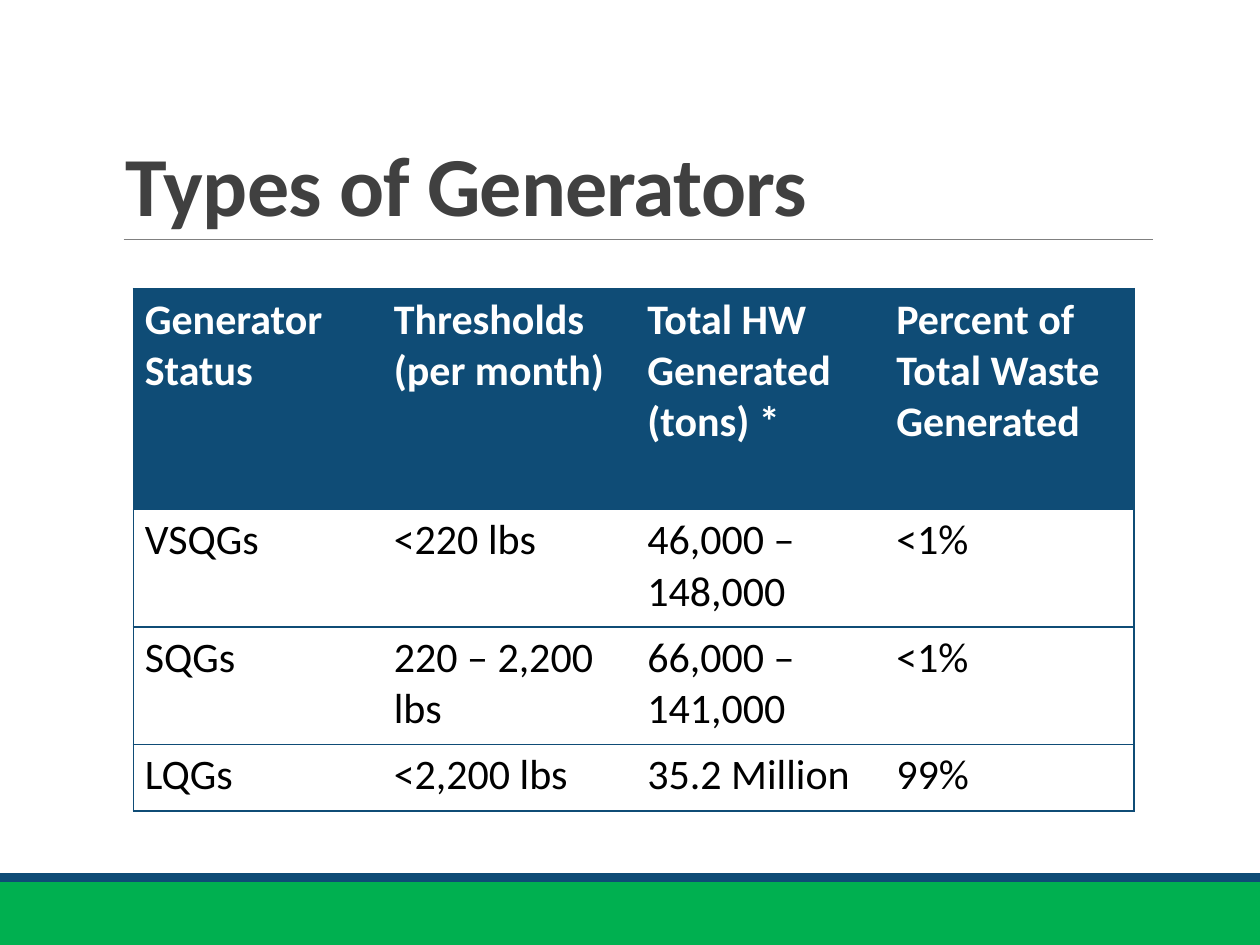
"""Build the slide on types of hazardous waste generators."""
import lxml.etree
import pptx
import pptx.dml.color
import pptx.enum.shapes
import pptx.enum.text
import pptx.oxml.ns
import pptx.util

Cm = pptx.util.Cm
Pt = pptx.util.Pt
RGBColor = pptx.dml.color.RGBColor
qn = pptx.oxml.ns.qn

TITLE = "Types of Generators"
ROWS = [
    ["Generator Status", "Thresholds\n(per month)", "Total HW Generated (tons) *",
     "Percent of Total Waste Generated"],
    ["VSQGs", "<220 lbs", "46,000 – 148,000", "<1%"],
    ["SQGs", "220 – 2,200 lbs", "66,000 – 141,000", "<1%"],
    ["LQGs", "<2,200 lbs", "35.2 Million", "99%"],
]
COLUMN_WIDTHS = [5.02, 5.11, 5.02, 5.02]
ROW_HEIGHTS = [4.45, 2.37, 2.37, 1.34]
TABLE_LEFT, TABLE_TOP = 2.69, 5.82
SLIDE_WIDTH, SLIDE_HEIGHT = 25.4, 19.05

FONT = "Calibri"
GREEN = RGBColor(0x00, 0xB0, 0x50)
NAVY = RGBColor(0x0F, 0x4C, 0x76)
GRAY = RGBColor(0x80, 0x80, 0x80)
CHARCOAL = RGBColor(0x40, 0x40, 0x40)
WHITE = RGBColor(0xFF, 0xFF, 0xFF)
BLACK = RGBColor(0x00, 0x00, 0x00)

BANDS = [(17.78, 1.27, GREEN), (17.6, 0.18, NAVY)]


def add_band(slide, top, height, color):
    band = slide.shapes.add_shape(
        pptx.enum.shapes.MSO_SHAPE.RECTANGLE, 0, Cm(top), Cm(SLIDE_WIDTH), Cm(height))
    band.shadow.inherit = False
    band.fill.solid()
    band.fill.fore_color.rgb = color
    band.line.fill.background()


def add_run(paragraph, text, size, color, bold):
    run = paragraph.add_run()
    run.text = text
    run.font.name = FONT
    run.font.size = Pt(size)
    run.font.bold = bold
    run.font.color.rgb = color
    return run


def add_title(slide):
    box = slide.shapes.add_textbox(Cm(2.29), Cm(0.79), Cm(20.95), Cm(4.04))
    frame = box.text_frame
    frame.word_wrap = True
    frame.vertical_anchor = pptx.enum.text.MSO_ANCHOR.BOTTOM
    paragraph = frame.paragraphs[0]
    paragraph.line_spacing = 0.85
    run = add_run(paragraph, TITLE, 48, CHARCOAL, True)
    run.font._element.set("spc", "-50")


def add_rule(slide):
    rule = slide.shapes.add_connector(
        pptx.enum.shapes.MSO_CONNECTOR.STRAIGHT, Cm(2.49), Cm(4.83), Cm(23.24), Cm(4.83))
    rule.line.color.rgb = GRAY
    rule.line.width = Pt(0.5)
    lxml.etree.SubElement(rule._element.spPr, qn("a:effectLst"))


def set_borders(cell, visible):
    properties = cell._tc.get_or_add_tcPr()
    for index, side in enumerate(["lnL", "lnR", "lnT", "lnB"]):
        border = lxml.etree.Element(qn(f"a:{side}"), w=str(Pt(1)))
        if side in visible:
            fill = lxml.etree.SubElement(border, qn("a:solidFill"))
            lxml.etree.SubElement(fill, qn("a:srgbClr"), val=str(NAVY))
        else:
            lxml.etree.SubElement(border, qn("a:noFill"))
        properties.insert(index, border)


def fill_cell(cell, text, is_header):
    cell.margin_left = cell.margin_right = Cm(0.23)
    cell.margin_top = cell.margin_bottom = Cm(0.11)
    if is_header:
        cell.fill.solid()
        cell.fill.fore_color.rgb = NAVY
    else:
        cell.fill.background()
    frame = cell.text_frame
    for index, line in enumerate(text.split("\n")):
        paragraph = frame.add_paragraph() if index else frame.paragraphs[0]
        add_run(paragraph, line, 24, WHITE if is_header else BLACK, is_header)


def add_generator_table(slide):
    table = slide.shapes.add_table(
        len(ROWS), len(COLUMN_WIDTHS), Cm(TABLE_LEFT), Cm(TABLE_TOP),
        Cm(sum(COLUMN_WIDTHS)), Cm(sum(ROW_HEIGHTS))).table
    table.horz_banding = False
    for column, width in zip(table.columns, COLUMN_WIDTHS):
        column.width = Cm(width)
    for row, height in zip(table.rows, ROW_HEIGHTS):
        row.height = Cm(height)
    for row_index, texts in enumerate(ROWS):
        for column_index, text in enumerate(texts):
            cell = table.cell(row_index, column_index)
            fill_cell(cell, text, row_index == 0)
            visible = {"lnT", "lnB"}
            if column_index == 0:
                visible.add("lnL")
            if column_index == len(texts) - 1:
                visible.add("lnR")
            set_borders(cell, visible)


def main():
    presentation = pptx.Presentation()
    presentation.slide_width = Cm(SLIDE_WIDTH)
    presentation.slide_height = Cm(SLIDE_HEIGHT)
    slide = presentation.slides.add_slide(presentation.slide_layouts[6])
    for top, height, color in BANDS:
        add_band(slide, top, height, color)
    add_rule(slide)
    add_title(slide)
    add_generator_table(slide)
    presentation.save("out.pptx")


if __name__ == "__main__":
    main()
